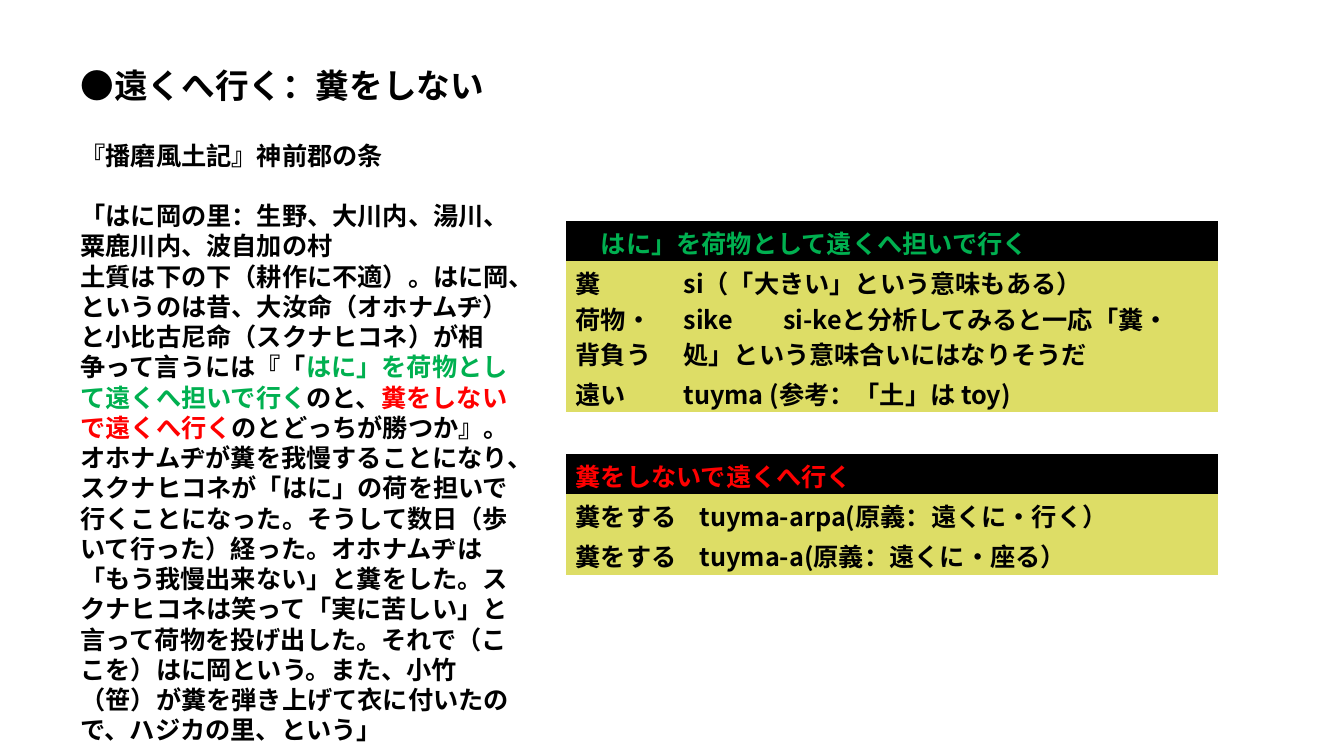
from pptx import Presentation
from pptx.dml.color import RGBColor
from pptx.enum.text import MSO_ANCHOR, MSO_AUTO_SIZE, PP_ALIGN
from pptx.oxml.ns import qn
from pptx.util import Inches, Pt

FONT = "Noto Sans CJK JP"
BLACK = RGBColor(0x00, 0x00, 0x00)
GREEN = RGBColor(0x00, 0xB0, 0x50)
RED = RGBColor(0xFF, 0x00, 0x00)
OLIVE = RGBColor(0xDD, 0xDD, 0x66)
PLAIN_TABLE = "{2D5ABB26-0587-4C30-8999-92F81FD0307C}"

CARRYING = "はに」を荷物として遠くへ担いで行く"
HOLDING = "糞をしないで遠くへ行く"


def write(paragraph, pieces, size, spacing):
    """Fill a paragraph with (text, colour) pieces in the bold slide font."""
    paragraph.alignment = PP_ALIGN.LEFT
    paragraph.line_spacing = Pt(spacing)
    for text, color in pieces:
        run = paragraph.add_run()
        run.text = text
        run.font.name = FONT
        run.font.size = Pt(size)
        run.font.bold = True
        run.font.color.rgb = color
        east_asian = run.font._element.makeelement(qn("a:ea"), {"typeface": FONT})
        run.font._element.find(qn("a:latin")).addnext(east_asian)


prs = Presentation()
prs.slide_width = Inches(13.33)
prs.slide_height = Inches(7.5)
slide = prs.slides.add_slide(prs.slide_layouts[5])

title = slide.shapes.title
title.left, title.top = Inches(0.7), Inches(0.59)
title.width, title.height = Inches(4.63), Inches(0.5)
title.text_frame.word_wrap = True
title.text_frame.auto_size = MSO_AUTO_SIZE.SHAPE_TO_FIT_TEXT
title.text_frame.vertical_anchor = MSO_ANCHOR.TOP
write(title.text_frame.paragraphs[0], [("●遠くへ行く：糞をしない", BLACK)], 24, 28.8)

story = slide.shapes.add_textbox(
    Inches(0.7), Inches(1.34), Inches(4.63), Inches(6.16)).text_frame
story.word_wrap = True
story.auto_size = MSO_AUTO_SIZE.SHAPE_TO_FIT_TEXT
write(story.paragraphs[0], [("『播磨風土記』神前郡の条", BLACK)], 18, 21.6)

legend = story.add_paragraph()
legend.space_before = Pt(21.6)
write(legend, [("「はに岡の里：生野、大川内、湯川、粟鹿川内、波自加の村", BLACK)], 18, 21.6)
legend.add_line_break()
write(legend, [
    ("土質は下の下（耕作に不適）。はに岡、というのは昔、大汝命（オホナムヂ）と"
     "小比古尼命（スクナヒコネ）が相争って言うには『「", BLACK),
    (CARRYING, GREEN),
    ("のと、", BLACK),
    (HOLDING, RED),
    ("のとどっちが勝つか』。オホナムヂが糞を我慢することになり、スクナヒコネが"
     "「はに」の荷を担いで行くことになった。そうして数日（歩いて行った）経った。"
     "オホナムヂは「もう我慢出来ない」と糞をした。スクナヒコネは笑って"
     "「実に苦しい」と言って荷物を投げ出した。それで（ここを）はに岡という。"
     "また、小竹（笹）が糞を弾き上げて衣に付いたので、ハジカの里、という」", BLACK),
], 18, 21.6)

# Each glossary: top, column widths, heading pieces, (row height, term, gloss)
glossaries = [
    (4.5, (1.23, 5.24), [(HOLDING, RED)], [
        (0.4, "糞をする", "tuyma-arpa(原義：遠くに・行く）"),
        (0.4, "糞をする", "tuyma-a(原義：遠くに・座る）"),
    ]),
    (2.19, (1.07, 5.4), [("「", BLACK), (CARRYING, GREEN)], [
        (0.4, "糞", "si（「大きい」という意味もある）"),
        (0.7, "荷物・背負う",
         "sike　　si-keと分析してみると一応「糞・処」という意味合いにはなりそうだ"),
        (0.4, "遠い", "tuyma (参考：「土」は toy)"),
    ]),
]

for top, widths, heading, entries in glossaries:
    heights = [0.4] + [entry[0] for entry in entries]
    frame = slide.shapes.add_table(
        len(heights), 2, Inches(5.61), Inches(top), Inches(6.47), Inches(sum(heights)))
    frame._element.find(".//" + qn("a:tableStyleId")).text = PLAIN_TABLE
    glossary = frame.table
    for column, width in zip(glossary.columns, widths):
        column.width = Inches(width)
    for row, height in zip(glossary.rows, heights):
        row.height = Inches(height)
        for cell in row.cells:
            cell.margin_top = Inches(0.04 if height == 0.4 else 0)
            cell.margin_bottom = 0
            cell.vertical_anchor = MSO_ANCHOR.MIDDLE
            cell.fill.solid()
            cell.fill.fore_color.rgb = OLIVE

    header = glossary.cell(0, 0)
    header.merge(glossary.cell(0, 1))
    header.fill.fore_color.rgb = BLACK
    write(header.text_frame.paragraphs[0], heading, 18, 25)
    for row_number, (_, *texts) in enumerate(entries, 1):
        for column_number, text in enumerate(texts):
            cell = glossary.cell(row_number, column_number)
            write(cell.text_frame.paragraphs[0], [(text, BLACK)], 18, 25)

prs.save("out.pptx")
